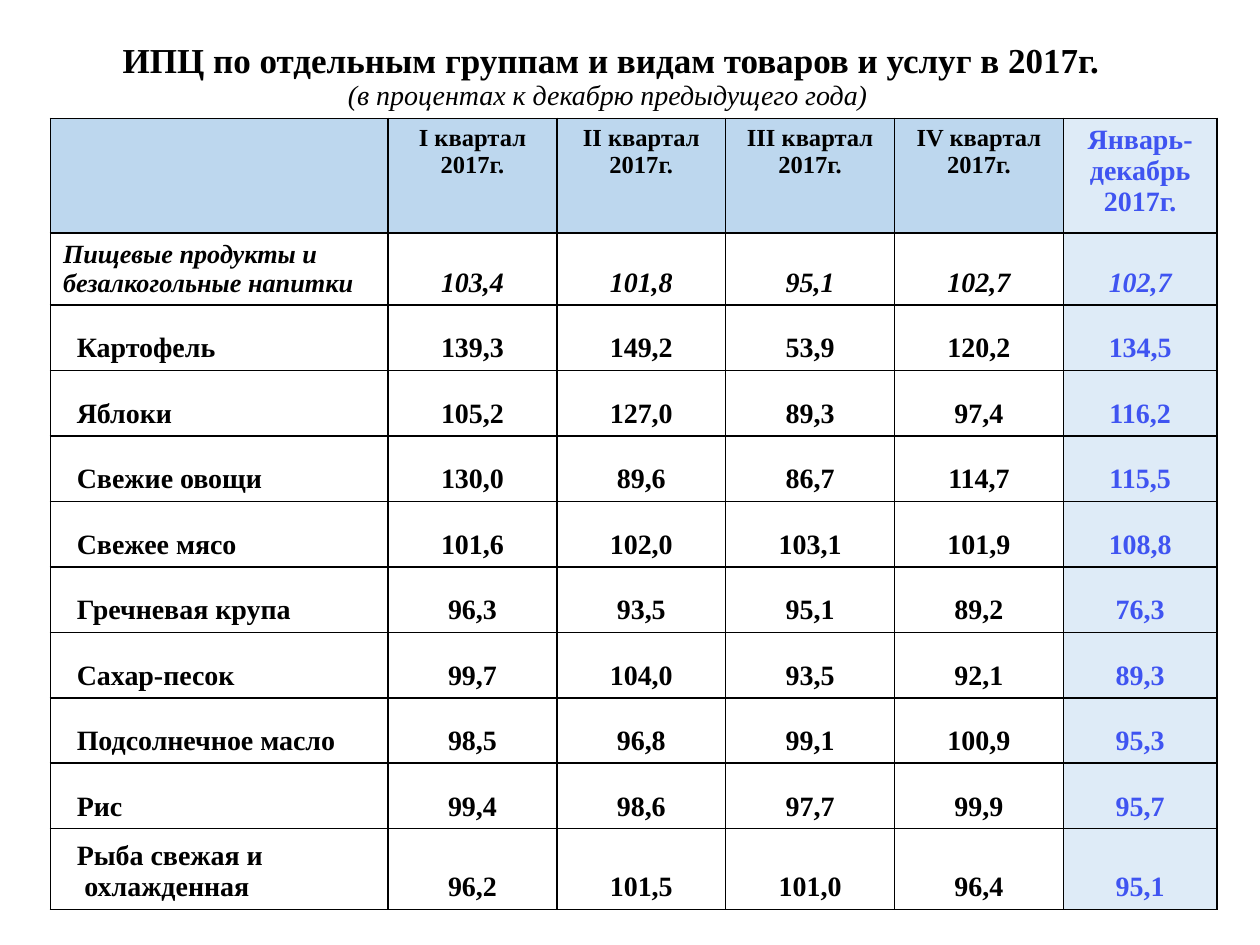
from dataclasses import dataclass

from lxml import etree
from pptx import Presentation
from pptx.dml.color import RGBColor
from pptx.enum import text as t
from pptx.oxml import ns
from pptx.util import Inches, Pt


@dataclass(frozen=True)
class Theme:
    font: str = "Times New Roman"
    ink: str = "000000"
    accent: str = "3F54F1"
    header_fill: str = "BDD7EE"
    total_fill: str = "DEEBF7"
    title_size: int = 20
    body_size: int = 16
    group_size: int = 15
    quarter_size: int = 14


THEME = Theme()
HEADER = ["", "I квартал 2017г.", "II квартал 2017г.", "III квартал 2017г.",
          "IV квартал 2017г.", "Январь-декабрь 2017г."]
ROWS = [
    ("Пищевые продукты и безалкогольные напитки", "103,4 101,8 95,1 102,7 102,7"),
    ("Картофель", "139,3 149,2 53,9 120,2 134,5"),
    ("Яблоки", "105,2 127,0 89,3 97,4 116,2"),
    ("Свежие овощи", "130,0 89,6 86,7 114,7 115,5"),
    ("Свежее мясо", "101,6 102,0 103,1 101,9 108,8"),
    ("Гречневая крупа", "96,3 93,5 95,1 89,2 76,3"),
    ("Сахар-песок", "99,7 104,0 93,5 92,1 89,3"),
    ("Подсолнечное масло", "98,5 96,8 99,1 100,9 95,3"),
    ("Рис", "99,4 98,6 97,7 99,9 95,7"),
    ("Рыба свежая и\nохлажденная", "96,2 101,5 101,0 96,4 95,1"),
]
COL_WIDTHS = [2.68] + [1.34] * 4 + [1.22]
ROW_HEIGHTS = [0.91, 0.57] + [0.52] * 8 + [0.64]
ITEM_INDENTS = [0.11, 0.17]


def add_run(p, content, color=THEME.ink, **fmt):
    r = p.add_run()
    r.text = content
    for name, value in {"name": THEME.font, **fmt}.items():
        setattr(r.font, name, value)
    r.font.color.rgb = RGBColor.from_string(color)


def add_title(s, left, top, width, height):
    tf = s.shapes.add_textbox(left, top, width, height).text_frame
    tf.word_wrap = True
    tf.vertical_anchor = t.MSO_ANCHOR.MIDDLE
    p = tf.paragraphs[0]
    p.alignment = t.PP_ALIGN.CENTER
    p.line_spacing = 0.9
    add_run(p, "ИПЦ по отдельным группам и видам товаров и услуг в 2017г.",
            size=Pt(THEME.title_size), bold=True)
    p.add_line_break()
    add_run(p, "(в процентах к декабрю предыдущего года) ",
            size=Pt(THEME.body_size), bold=False, italic=True)


def set_borders(cell):
    """Draw a 1 pt line on all four sides; call before filling the cell."""
    tc_pr = cell._tc.get_or_add_tcPr()
    for side in ("a:lnL", "a:lnR", "a:lnT", "a:lnB"):
        ln = etree.SubElement(tc_pr, ns.qn(side), w=str(Pt(1)))
        fill = etree.SubElement(ln, ns.qn("a:solidFill"))
        etree.SubElement(fill, ns.qn("a:srgbClr"), val=THEME.ink)


def fill_cell(cell, content, row, col):
    """Format one cell by its place: header row, group row, label or total column."""
    header, group, label = row == 0, row == 1, col == 0
    total = col == len(COL_WIDTHS) - 1
    set_borders(cell)
    if total or header:
        cell.fill.solid()
        cell.fill.fore_color.rgb = RGBColor.from_string(
            THEME.total_fill if total else THEME.header_fill)
    else:
        cell.fill.background()
    cell.vertical_anchor = t.MSO_ANCHOR.TOP if header else t.MSO_ANCHOR.BOTTOM

    size = THEME.body_size
    if header and not total:
        size = THEME.quarter_size
    elif group and label:
        size = THEME.group_size
    tf = cell.text_frame
    for i, line in enumerate(content.split("\n") if content else []):
        p = tf.paragraphs[0] if i == 0 else tf.add_paragraph()
        p.alignment = t.PP_ALIGN.LEFT if label else t.PP_ALIGN.CENTER
        if label and not group:
            p._p.get_or_add_pPr().set("marL", str(Inches(ITEM_INDENTS[i])))
        add_run(p, line, THEME.accent if total else THEME.ink,
                size=Pt(size), bold=True, italic=group)


def add_price_table(s, left, top, width, height):
    data = [HEADER] + [[label, *values.split()] for label, values in ROWS]
    table = s.shapes.add_table(len(data), len(HEADER), left, top, width, height).table
    table.first_row = table.horz_banding = False
    for column, w in zip(table.columns, COL_WIDTHS):
        column.width = Inches(w)
    for row, h in zip(table.rows, ROW_HEIGHTS):
        row.height = Inches(h)
    for i, values in enumerate(data):
        for j, content in enumerate(values):
            fill_cell(table.cell(i, j), content, i, j)


def main():
    prs = Presentation()
    prs.slide_width, prs.slide_height = Inches(10), Inches(7.5)
    s = prs.slides.add_slide(prs.slide_layouts[6])
    add_price_table(s, Inches(0.4), Inches(0.94), Inches(9.26), Inches(6.28))
    add_title(s, Inches(0.54), Inches(0.19), Inches(8.62), Inches(0.85))
    prs.save("out.pptx")


if __name__ == "__main__":
    main()
